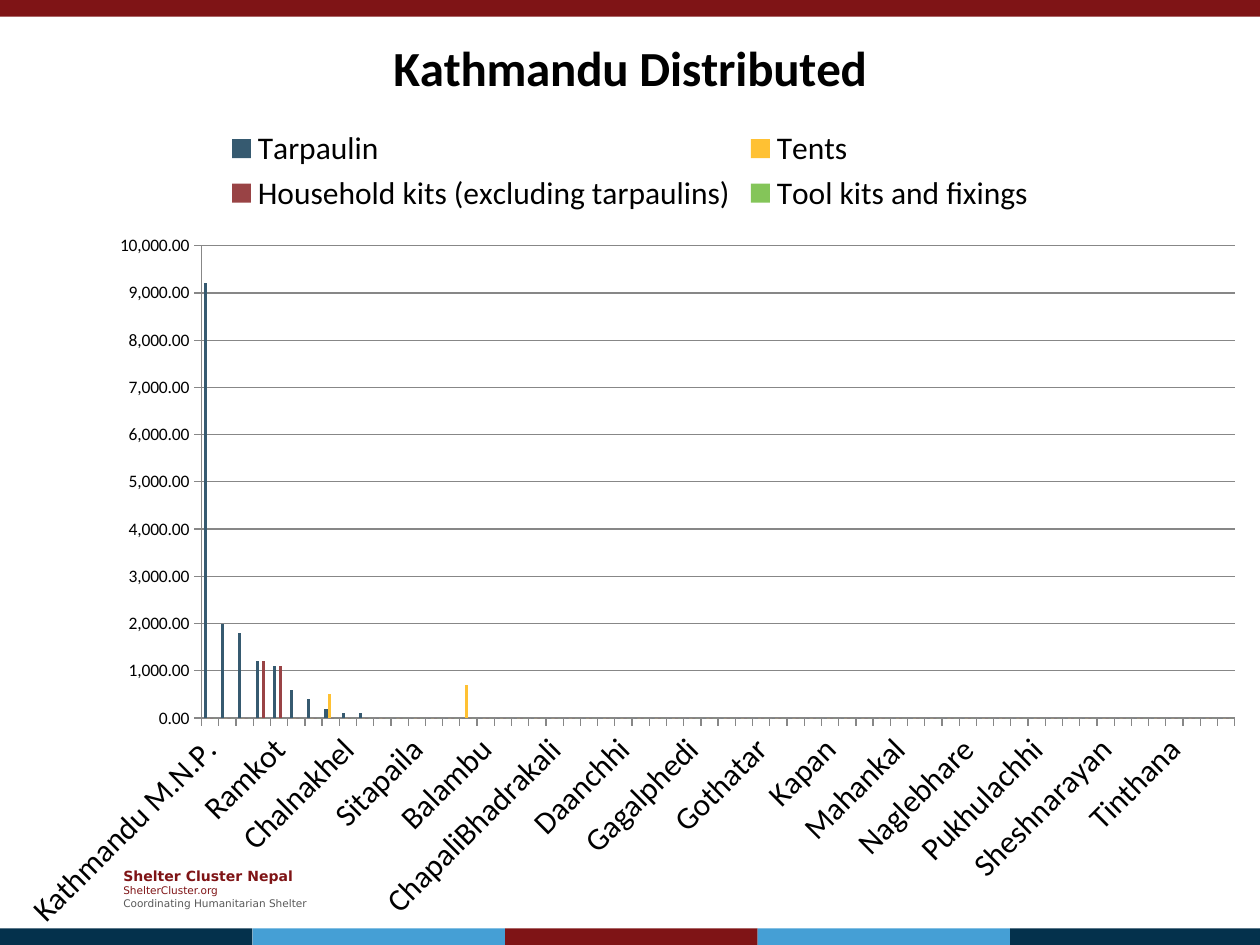
from dataclasses import dataclass

from lxml.etree import SubElement
from pptx import Presentation
from pptx.chart.data import CategoryChartData
from pptx.dml.color import RGBColor
from pptx.enum.chart import XL_CHART_TYPE, XL_LEGEND_POSITION, XL_TICK_MARK
from pptx.enum.shapes import MSO_SHAPE
from pptx.enum.text import MSO_ANCHOR, MSO_AUTO_SIZE
from pptx.oxml.ns import qn
from pptx.util import Pt


@dataclass(frozen=True)
class Theme:
    red: str = "7F1416"
    navy: str = "04314C"
    sky: str = "459FD5"
    grey: str = "595959"
    black: str = "000000"
    line: str = "878787"
    chart_font: str = "Calibri"
    footer_font: str = "DejaVu Sans"
    title: int = 28
    label: int = 18
    value: int = 10
    footer_head: int = 8
    footer: int = 6


@dataclass(frozen=True)
class Bar:
    left: float
    top: float
    width: float
    color: str


@dataclass(frozen=True)
class Series:
    name: str
    color: str
    distributed: dict  # place -> quantity; every other place is 0


@dataclass(frozen=True)
class FooterLine:
    text: str
    size: int
    color: str
    bold: bool = False


T = Theme()
WIDTH, HEIGHT, BAR_HEIGHT = 720, 540, 9.5
STRIPE = 144.3

BARS = [Bar(0, 0, WIDTH, T.red)] + [
    Bar(i * STRIPE, HEIGHT - BAR_HEIGHT, STRIPE, color)
    for i, color in enumerate([T.navy, T.sky, T.red, T.sky, T.navy])
]

FOOTER = [
    FooterLine("Shelter Cluster Nepal", T.footer_head, T.red, True),
    FooterLine("ShelterCluster.org", T.footer, T.red),
    FooterLine("Coordinating Humanitarian Shelter", T.footer, T.grey),
]

PLACES = [
    "Kathmandu M.N.P.", "Lapsephedi", "Kabhresthali", "Bhimdhunga", "Ramkot",
    "Sangla", "JhorMahankal", "Kirtipur N.P.", "Chalnakhel", "Talkududechour",
    "Futung", "Jorpati", "Sitapaila", "Aalapot", "BaadBhanjyang",
    "Bajrayogini(Sankhu)", "Balambu", "Baluwa", "Bhadrabas", "Budanilkantha",
    "ChapaliBhadrakali", "Chhaimale", "ChouketarDahachok", "Chunikhel", "Daanchhi",
    "Daxinkali", "Dhapasi", "Dharmasthali", "Gagalphedi", "Gokarneswor",
    "Goldhunga", "Gonggabu", "Gothatar", "IchangNarayan", "Indrayani",
    "Jitpurphedi", "Kapan", "KhadkaBhadrakali", "Machhegaun", "Mahadevathan",
    "Mahankal", "Manmaiju", "Matatirtha", "Mulpani", "Naglebhare",
    "NaikapNayaBhanjyang", "NaikapPuranoBhanjyang", "Nayapati", "Pukhulachhi",
    "Satikhel", "Satungal", "Seuchatar", "Sheshnarayan", "Sundarijal", "Suntol",
    "Thankot", "Tinthana", "TokhaChandeswori", "TokhaSarswoti", "TBD",
]

TARPAULINS = [9200, 2000, 1800, 1200, 1100, 600, 400, 200, 100, 100]
SERIES = [
    Series("Tarpaulin", "365A70", dict(zip(PLACES, TARPAULINS))),
    Series("Tents", "FFC133", {"Kirtipur N.P.": 500, "Bajrayogini(Sankhu)": 700}),
    Series("Household kits (excluding tarpaulins)", "994345",
           {"Bhimdhunga": 1200, "Ramkot": 1100}),
    Series("Tool kits and fixings", "84C559", {}),
]


def rgb(color: str) -> RGBColor:
    return RGBColor.from_string(color)


def draw_bar(s, bar: Bar) -> None:
    sp = s.shapes.add_shape(MSO_SHAPE.RECTANGLE, Pt(bar.left), Pt(bar.top),
                            Pt(bar.width), Pt(BAR_HEIGHT))
    sp.shadow.inherit = False
    sp.fill.solid()
    sp.fill.fore_color.rgb = rgb(bar.color)
    sp.line.fill.background()


def draw_footer(s, lines: list[FooterLine]) -> None:
    tf = s.shapes.add_textbox(Pt(63.4), Pt(491.8), Pt(124.6), Pt(31.7)).text_frame
    tf.word_wrap = True
    tf.auto_size = MSO_AUTO_SIZE.SHAPE_TO_FIT_TEXT
    tf.vertical_anchor = MSO_ANCHOR.MIDDLE
    for i, line in enumerate(lines):
        p = tf.add_paragraph() if i else tf.paragraphs[0]
        p.text = line.text
        p.font.name = T.footer_font
        p.font.size = Pt(line.size)
        p.font.bold = line.bold
        p.font.color.rgb = rgb(line.color)


def style_font(font, size: int) -> None:
    font.name = T.chart_font
    font.size = Pt(size)
    font.color.rgb = rgb(T.black)


def place_plot(chart, x: float, y: float, w: float, h: float) -> None:
    """Fix the inner plot area, as fractions of the chart."""
    area = chart._chartSpace.find(".//" + qn("c:plotArea"))
    layout = area.find(qn("c:layout"))
    if layout is None:
        layout = SubElement(area, qn("c:layout"))
        area.insert(0, layout)
    manual = SubElement(layout, qn("c:manualLayout"))
    settings = {"layoutTarget": "inner", "xMode": "edge", "yMode": "edge",
                "x": x, "y": y, "w": w, "h": h}
    for tag, val in settings.items():
        SubElement(manual, qn("c:" + tag)).set("val", str(val))


def draw_chart(s) -> None:
    data = CategoryChartData(number_format="#,##0.00")
    data.categories = PLACES
    for series in SERIES:
        data.add_series(series.name, [series.distributed.get(c, 0) for c in PLACES])
    chart = s.shapes.add_chart(XL_CHART_TYPE.COLUMN_CLUSTERED, 0, 0,
                               Pt(WIDTH), Pt(HEIGHT), data).chart
    style_font(chart.font, T.value)
    place_plot(chart, 0.16, 0.26, 0.82, 0.5)

    # Title and legend
    chart.has_title = True
    p = chart.chart_title.text_frame.paragraphs[0]
    p.text = "Kathmandu Distributed"
    style_font(p.font, T.title)
    p.font.bold = True
    chart.has_legend = True
    chart.legend.position = XL_LEGEND_POSITION.TOP
    chart.legend.include_in_layout = False
    style_font(chart.legend.font, T.label)

    # Columns
    plot = chart.plots[0]
    plot.gap_width = 150
    plot.overlap = 0
    plot.vary_by_categories = False
    for column, series in zip(plot.series, SERIES):
        column.format.fill.solid()
        column.format.fill.fore_color.rgb = rgb(series.color)

    # Axes
    cat, val = chart.category_axis, chart.value_axis
    for axis, size in ((cat, T.label), (val, T.value)):
        axis.major_tick_mark = XL_TICK_MARK.OUTSIDE
        axis.minor_tick_mark = XL_TICK_MARK.NONE
        axis.format.line.color.rgb = rgb(T.line)
        style_font(axis.tick_labels.font, size)
    body = cat._element.find(qn("c:txPr")).find(qn("a:bodyPr"))
    body.set("rot", "-2700000")
    val.minimum_scale, val.maximum_scale, val.major_unit = 0, 10000, 1000
    val.has_major_gridlines = True
    val.major_gridlines.format.line.color.rgb = rgb(T.line)
    val.tick_labels.number_format = "#,##0.00"
    val.tick_labels.number_format_is_linked = False


def main() -> None:
    prs = Presentation()
    prs.slide_width, prs.slide_height = Pt(WIDTH), Pt(HEIGHT)
    s = prs.slides.add_slide(prs.slide_layouts[6])
    draw_footer(s, FOOTER)
    for bar in BARS:
        draw_bar(s, bar)
    draw_chart(s)
    prs.save("out.pptx")


if __name__ == "__main__":
    main()
